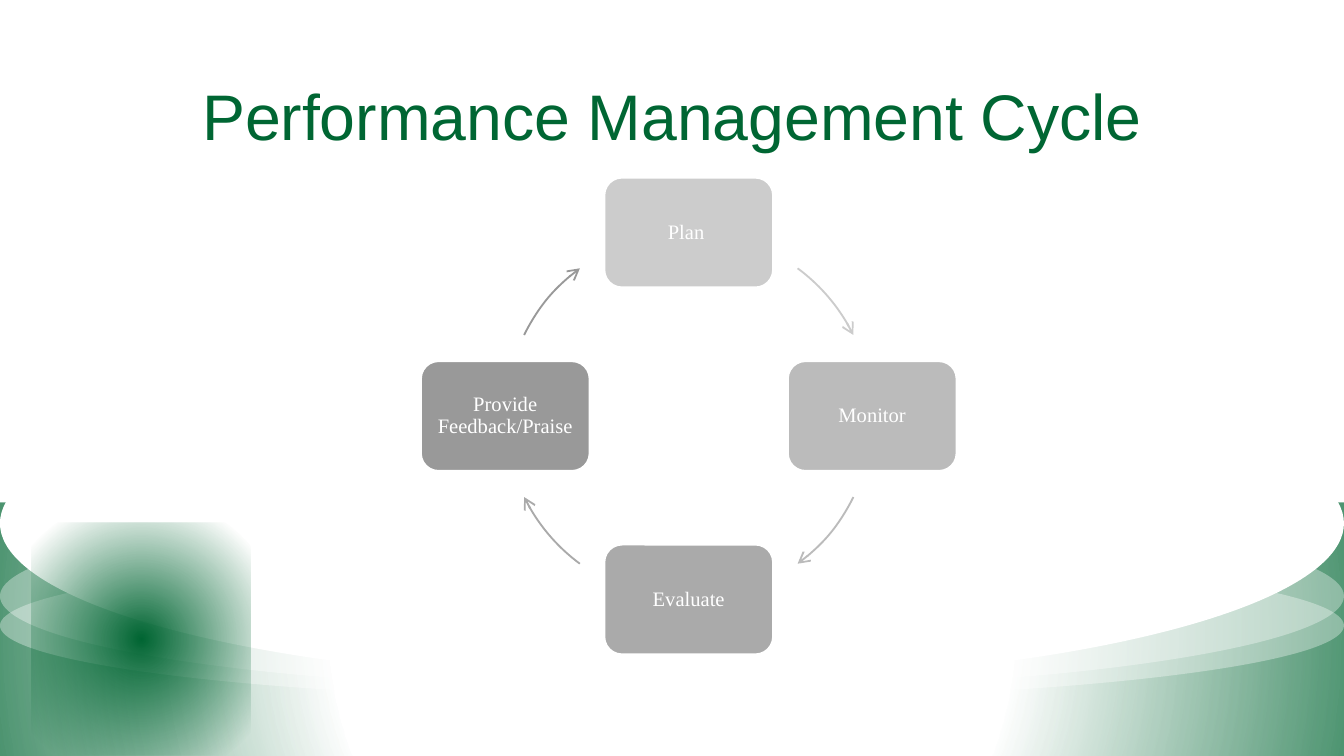
"""Build the Performance Management Cycle slide."""
from dataclasses import dataclass
from math import cos, radians, sin

from lxml.etree import SubElement
from pptx import Presentation
from pptx.dml.color import RGBColor
from pptx.enum.shapes import MSO_SHAPE as Preset
from pptx.enum.text import MSO_ANCHOR as Anchor, PP_ALIGN as Align
from pptx.oxml.ns import qn
from pptx.shapes.autoshape import Shape
from pptx.slide import Slide
from pptx.util import Pt


@dataclass(frozen=True)
class Theme:
    green: str = "006633"
    white: str = "FFFFFF"
    title_font: str = "Arial"
    step_font: str = "Times New Roman"
    title_size: float = 34.5
    step_size: float = 11
    veil_opacity: int = 34


@dataclass(frozen=True)
class Area:
    left: float
    top: float
    width: float
    height: float


@dataclass(frozen=True)
class Glow:
    area: Area
    stops: tuple[tuple[int, int], ...]


@dataclass(frozen=True)
class Wave:
    area: Area
    opacity: int


@dataclass(frozen=True)
class Step:
    label: str
    shade: str
    angle: float
    arrow_start: float


THEME = Theme()
CENTER_X, CENTER_Y, RADIUS = 369, 222.9, 98.3
STEP_WIDTH, STEP_HEIGHT = 91.4, 59.8
ARROW_SWEEP = 27.4

BAND = Glow(Area(0, 269.1, 720, 136.6), ((50, 0), (100, 70)))
SPOT = Glow(Area(16.6, 279.9, 117.6, 125.1), ((0, 100), (90, 0)))
WAVES = (
    Wave(Area(0, 295.2, 720, 79.9), THEME.veil_opacity),
    Wave(Area(0, 268.6, 720, 101.5), THEME.veil_opacity),
    Wave(Area(0, 195.1, 720, 170.6), 100),
)
STEPS = (
    Step("Plan ", "CCCCCC", 270, 306.4),
    Step("Monitor", "BBBBBB", 0, 26.2),
    Step("Evaluate", "AAAAAA", 90, 126.4),
    Step("Provide Feedback/Praise", "999999", 180, 206.2),
)


def rgb(code: str) -> RGBColor:
    return RGBColor.from_string(code)


def add_preset(slide: Slide, preset: Preset, area: Area) -> Shape:
    shape = slide.shapes.add_shape(
        preset, Pt(area.left), Pt(area.top), Pt(area.width), Pt(area.height))
    shape.shadow.inherit = False
    shape.line.fill.background()
    return shape


def add_glow(slide: Slide, glow: Glow) -> None:
    shape = add_preset(slide, Preset.RECTANGLE, glow.area)
    shape.fill.gradient()
    gradient = shape.fill._xPr.find(qn("a:gradFill"))
    for child in list(gradient):
        gradient.remove(child)
    stop_list = SubElement(gradient, qn("a:gsLst"))
    for position, opacity in glow.stops:
        stop = SubElement(stop_list, qn("a:gs"), pos=str(position * 1000))
        color = SubElement(stop, qn("a:srgbClr"), val=THEME.green)
        SubElement(color, qn("a:alpha"), val=str(opacity * 1000))
    circle = SubElement(gradient, qn("a:path"), path="circle")
    SubElement(circle, qn("a:fillToRect"), l="50000", t="50000", r="50000", b="50000")


def add_wave(slide: Slide, wave: Wave) -> None:
    shape = add_preset(slide, Preset.FLOWCHART_CONNECTOR, wave.area)
    shape.fill.solid()
    shape.fill.fore_color.rgb = rgb(THEME.white)
    if wave.opacity < 100:
        color = shape.fill._xPr.find(qn("a:solidFill")).find(qn("a:srgbClr"))
        SubElement(color, qn("a:alpha"), val=str(wave.opacity * 1000))


def add_step(slide: Slide, step: Step) -> None:
    x = CENTER_X + RADIUS * cos(radians(step.angle))
    y = CENTER_Y + RADIUS * sin(radians(step.angle))
    box = add_preset(slide, Preset.ROUNDED_RECTANGLE, Area(
        x - STEP_WIDTH / 2, y - STEP_HEIGHT / 2, STEP_WIDTH, STEP_HEIGHT))
    box.fill.solid()
    box.fill.fore_color.rgb = rgb(step.shade)
    box.line.color.rgb = rgb(THEME.white)
    box.line.width = Pt(2)
    frame = box.text_frame
    frame.text = step.label
    frame.word_wrap = True
    frame.vertical_anchor = Anchor.MIDDLE
    frame.margin_left = frame.margin_right = Pt(3.6)
    frame.margin_top = frame.margin_bottom = Pt(3.6)
    label = frame.paragraphs[0]
    label.alignment = Align.CENTER
    label.line_spacing = 0.9
    style_font(label.runs[0].font, THEME.step_font, THEME.step_size, THEME.white)


def add_arrow(slide: Slide, step: Step) -> None:
    arc = add_preset(slide, Preset.ARC, Area(
        CENTER_X - RADIUS, CENTER_Y - RADIUS, 2 * RADIUS, 2 * RADIUS))
    arc.adjustments[0] = step.arrow_start * 0.6
    arc.adjustments[1] = (step.arrow_start + ARROW_SWEEP) * 0.6
    arc.fill.background()
    arc.line.color.rgb = rgb(step.shade)
    arc.line.width = Pt(1)
    SubElement(arc.line._get_or_add_ln(), qn("a:tailEnd"), type="arrow")


def style_font(font, name: str, size: float, color: str) -> None:
    font.name = name
    font.size = Pt(size)
    font.color.rgb = rgb(color)


def add_title(slide: Slide) -> None:
    title = slide.shapes.title
    title.left, title.top = Pt(43.2), Pt(6.5)
    title.width, title.height = Pt(633.6), Pt(79.2)
    frame = title.text_frame
    frame.text = "Performance Management Cycle"
    frame.vertical_anchor = Anchor.BOTTOM
    heading = frame.paragraphs[0]
    heading.alignment = Align.CENTER
    style_font(heading.runs[0].font, THEME.title_font, THEME.title_size, THEME.green)


def main() -> None:
    deck = Presentation()
    deck.slide_width, deck.slide_height = Pt(720), Pt(405)
    slide = deck.slides.add_slide(deck.slide_layouts[5])
    add_title(slide)
    add_glow(slide, BAND)
    for wave in WAVES:
        add_wave(slide, wave)
    add_glow(slide, SPOT)
    for step in STEPS:
        add_step(slide, step)
        add_arrow(slide, step)
    deck.save("out.pptx")


if __name__ == "__main__":
    main()
